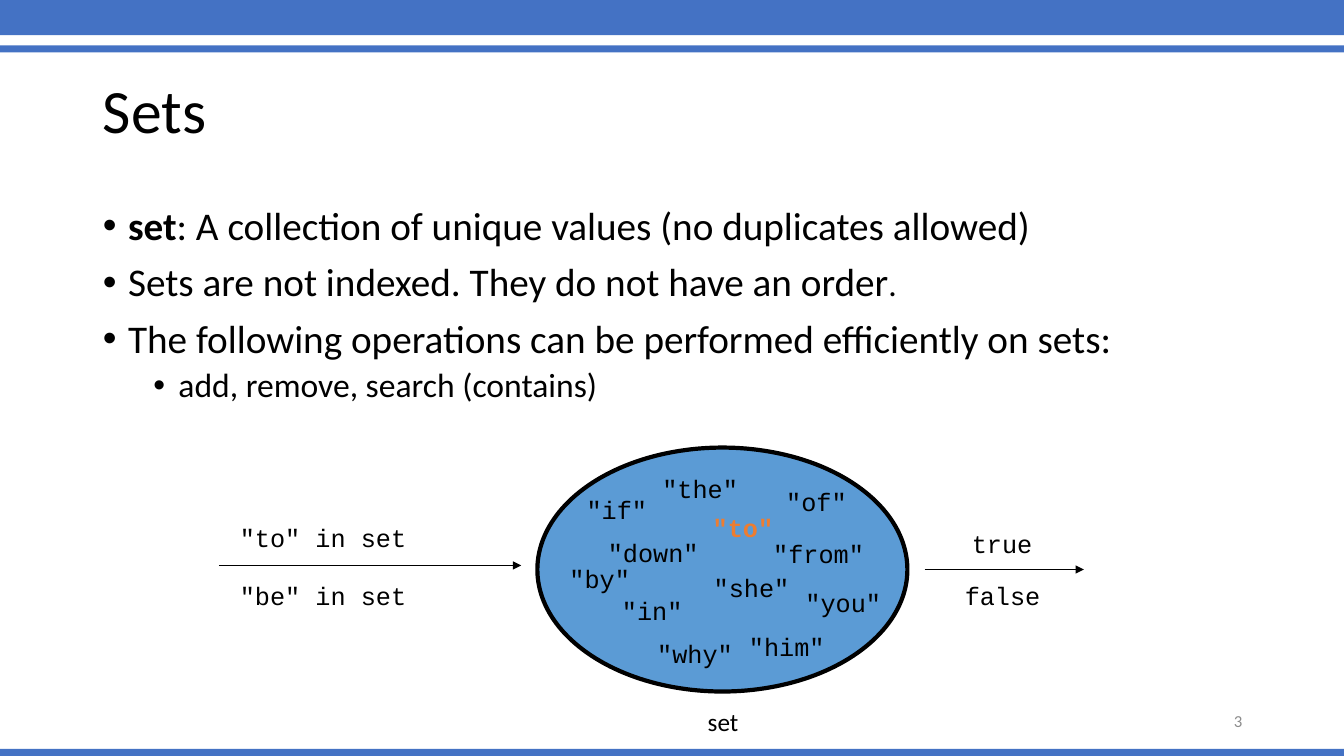
from dataclasses import dataclass

from lxml import etree
from pptx import Presentation
from pptx.dml.color import RGBColor
from pptx.enum.shapes import MSO_CONNECTOR, MSO_SHAPE
from pptx.enum.text import MSO_ANCHOR, MSO_AUTO_SIZE, PP_ALIGN
from pptx.oxml.ns import qn
from pptx.util import Inches, Pt

RECT, OVAL = MSO_SHAPE.RECTANGLE, MSO_SHAPE.OVAL
STRAIGHT = MSO_CONNECTOR.STRAIGHT
TOP, MIDDLE = MSO_ANCHOR.TOP, MSO_ANCHOR.MIDDLE
LEFT, RIGHT = PP_ALIGN.LEFT, PP_ALIGN.RIGHT
FIXED, GROW = MSO_AUTO_SIZE.NONE, MSO_AUTO_SIZE.SHAPE_TO_FIT_TEXT

SANS, MONO = "Calibri", "Courier New"
COLORS = {"bar": "4472C4", "oval": "5B9BD5", "ink": "000000",
          "hit": "ED7D31", "page": "8C8C8C"}
SLIDE_W, SLIDE_H = 13.33, 7.5
LABEL_H = 0.4
CHAR_W, PAD_W = 0.15, 0.2


@dataclass
class Run:
    text: str
    size: float
    bold: bool = False
    font: str = SANS
    color: str = "ink"


@dataclass
class Bullet:
    runs: list[Run]
    level: int = 0


@dataclass
class Word:
    text: str
    left: float
    top: float
    hit: bool = False


@dataclass
class Arrow:
    left: float
    right: float
    y: float


BARS = [(-0.03, 0.38), (0.45, 0.07), (7.43, 0.07)]
BULLETS = [
    Bullet([Run("set", 28, True),
            Run(": A collection of unique values (no duplicates allowed)", 28)]),
    Bullet([Run("Sets are not indexed. They do not have an order", 28),
            Run(".", 24)]),
    Bullet([Run("The following operations can be performed efficiently on sets:", 28)]),
    Bullet([Run("add, remove, search (contains)", 24)], 1),
]
ARROWS = [Arrow(2.17, 5.17, 5.61), Arrow(9.17, 10.75, 5.65)]
WORDS = [
    Word('"to" in set', 2.28, 5.13),
    Word('"be" in set', 2.28, 5.71),
    Word("true", 9.54, 5.19),
    Word("false", 9.47, 5.71),
    Word('"the"', 6.47, 4.65),
    Word('"of"', 7.7, 4.78),
    Word('"from"', 7.57, 5.29),
    Word('"to"', 6.97, 5.03, True),
    Word('"she"', 6.98, 5.63),
    Word('"you"', 7.89, 5.78),
    Word('"him"', 7.33, 6.21),
    Word('"why"', 6.42, 6.28),
    Word('"in"', 6.07, 5.86),
    Word('"down"', 5.93, 5.28),
    Word('"by"', 5.55, 5.54),
    Word('"if"', 5.72, 4.86),
]


def rgb(name: str) -> RGBColor:
    return RGBColor.from_string(COLORS[name])


def place(shape, left: float, top: float, width: float, height: float) -> None:
    shape.left, shape.top = Inches(left), Inches(top)
    shape.width, shape.height = Inches(width), Inches(height)


def add_run(para, run: Run) -> None:
    part = para.add_run()
    part.text = run.text
    font = part.font
    font.name, font.size, font.bold = run.font, Pt(run.size), run.bold
    font.color.rgb = rgb(run.color)


def add_shape(slide, kind, color: str, left: float, top: float,
              width: float, height: float):
    shape = slide.shapes.add_shape(kind, Inches(left), Inches(top),
                                   Inches(width), Inches(height))
    shape.shadow.inherit = False
    shape.fill.solid()
    shape.fill.fore_color.rgb = rgb(color)
    shape.line.fill.background()
    return shape


def add_label(slide, run: Run, left: float, top: float, width: float):
    box = slide.shapes.add_textbox(Inches(left), Inches(top),
                                   Inches(width), Inches(LABEL_H))
    frame = box.text_frame
    frame.word_wrap = False
    frame.auto_size = GROW
    add_run(frame.paragraphs[0], run)
    return box


def add_arrow(slide, arrow: Arrow) -> None:
    line = slide.shapes.add_connector(STRAIGHT, Inches(arrow.left), Inches(arrow.y),
                                      Inches(arrow.right), Inches(arrow.y))
    line.line.color.rgb = rgb("ink")
    line.line.width = Pt(0.75)
    props = line.element.spPr
    etree.SubElement(props.find(qn("a:ln")), qn("a:tailEnd"), type="triangle")
    etree.SubElement(props, qn("a:effectLst"))


def add_title(slide) -> None:
    title = slide.shapes.title
    place(title, 0.92, 0.4, 11.5, 1.45)
    frame = title.text_frame
    frame.vertical_anchor = MIDDLE
    frame.auto_size = FIXED
    para = frame.paragraphs[0]
    para.alignment, para.line_spacing = LEFT, 0.9
    add_run(para, Run("Sets", 44))


def add_list(slide) -> None:
    body = slide.placeholders[1]
    place(body, 0.92, 2, 11.5, 4.76)
    frame = body.text_frame
    frame.vertical_anchor = TOP
    frame.auto_size = FIXED
    for i, item in enumerate(BULLETS):
        para = frame.add_paragraph() if i else frame.paragraphs[0]
        para.level = item.level
        para.line_spacing = 0.9
        para.space_before = Pt(5 if item.level else 10)
        para.space_after = Pt(0)
        for run in item.runs:
            add_run(para, run)
        props = para._p.get_or_add_pPr()
        props.set("marL", str(Inches(0.25 + 0.5 * item.level)))
        props.set("indent", str(Inches(-0.25)))
        etree.SubElement(props, qn("a:buFont"), typeface="Arial")
        etree.SubElement(props, qn("a:buChar"), char="•")


def add_page(slide) -> None:
    page = add_label(slide, Run("3", 12, color="page"), 9.42, 6.95, 3)
    frame = page.text_frame
    frame.word_wrap = True
    frame.auto_size = FIXED
    frame.vertical_anchor = MIDDLE
    frame.paragraphs[0].alignment = RIGHT


def main() -> None:
    deck = Presentation()
    deck.slide_width, deck.slide_height = Inches(SLIDE_W), Inches(SLIDE_H)
    slide = deck.slides.add_slide(deck.slide_layouts[1])
    for top, height in BARS:
        add_shape(slide, RECT, "bar", 0, top, SLIDE_W, height)
    add_title(slide)
    add_list(slide)
    for arrow in ARROWS:
        add_arrow(slide, arrow)
    oval = add_shape(slide, OVAL, "oval", 5.33, 4.44, 3.67, 2.42)
    oval.line.color.rgb = rgb("ink")
    oval.line.width = Pt(3)
    for word in WORDS:
        run = Run(word.text, 18, word.hit, MONO, "hit" if word.hit else "ink")
        add_label(slide, run, word.left, word.top, PAD_W + CHAR_W * len(word.text))
    add_label(slide, Run("set", 18), 6.92, 6.96, 0.51)
    add_page(slide)
    deck.save("out.pptx")


if __name__ == "__main__":
    main()
